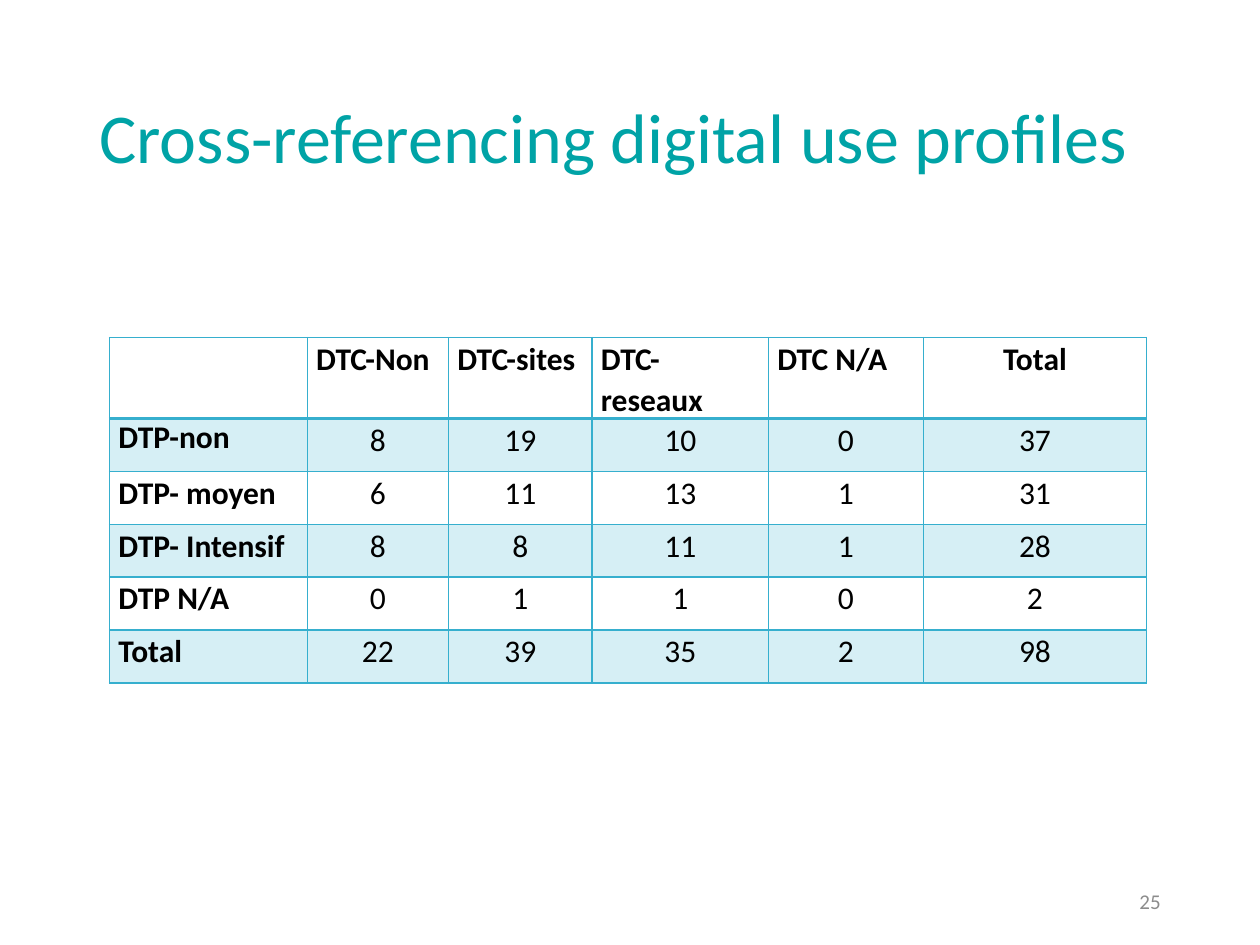
from dataclasses import dataclass

from lxml.etree import SubElement
from pptx import Presentation
from pptx.dml.color import RGBColor
from pptx.enum.text import MSO_ANCHOR, PP_ALIGN
from pptx.oxml.ns import qn
from pptx.util import Inches, Pt

COLORS = {"title": "00A3A6", "number": "8C8C8C", "text": "000000", "accent": "36AFCE"}
FONT = "Calibri"
WIDTH, HEIGHT = Inches(10), Inches(7.5)
COLUMNS = [1.57, 1.12, 1.14, 1.4, 1.23, 1.77]
ROW_HEIGHT = 0.42
HEADER = ["", "DTC-Non", "DTC-sites", "DTC-reseaux", "DTC N/A", "Total"]


@dataclass
class Profile:
    name: str
    counts: list[int]


@dataclass
class Label:
    text: str
    box: tuple[float, float, float, float]
    style: dict


PROFILES = [
    Profile("DTP-non", [8, 19, 10, 0, 37]),
    Profile("DTP- moyen", [6, 11, 13, 1, 31]),
    Profile("DTP- Intensif", [8, 8, 11, 1, 28]),
    Profile("DTP N/A", [0, 1, 1, 0, 2]),
    Profile("Total", [22, 39, 35, 2, 98]),
]
LABELS = [
    Label("Cross-referencing digital use profiles", (0.069, 0.053, 0.862, 0.193),
          dict(size=40, color="title", spacing=0.9, before=10)),
    Label("25", (0.706, 0.927, 0.225, 0.053),
          dict(size=12, color="number", align=PP_ALIGN.RIGHT)),
]


def write(tf, text: str, size=18, color="text", bold=False,
          align=PP_ALIGN.LEFT, spacing=1.0, before=0) -> None:
    p = tf.paragraphs[0]
    p.alignment = align
    p.line_spacing = spacing
    p.space_before = Pt(before)
    p.font.size = Pt(size)
    r = p.add_run()
    r.text = text
    r.font.name = FONT
    r.font.size = Pt(size)
    r.font.bold = bold
    r.font.color.rgb = RGBColor.from_string(COLORS[color])


def add_label(s, label: Label) -> None:
    x, y, w, h = label.box
    sp = s.shapes.add_textbox(int(x * WIDTH), int(y * HEIGHT), int(w * WIDTH), int(h * HEIGHT))
    tf = sp.text_frame
    tf.word_wrap = True
    tf.vertical_anchor = MSO_ANCHOR.MIDDLE
    write(tf, label.text, **label.style)


def set_borders(cell, widths: dict[str, int]) -> None:
    tc_pr = cell._tc.get_or_add_tcPr()
    for side, width in widths.items():
        ln = SubElement(tc_pr, qn(f"a:ln{side}"), w=str(Pt(width)))
        fill = SubElement(ln, qn("a:solidFill"))
        SubElement(fill, qn("a:srgbClr"), val=COLORS["accent"])


def set_fill(cell, shaded: bool) -> None:
    if not shaded:
        cell.fill.background()
        return
    cell.fill.solid()
    cell.fill.fore_color.rgb = RGBColor.from_string(COLORS["accent"])
    color = cell._tc.tcPr.find(qn("a:solidFill")).find(qn("a:srgbClr"))
    SubElement(color, qn("a:alpha"), val="20000")


def add_profile_table(s) -> None:
    rows = [HEADER] + [[profile.name, *profile.counts] for profile in PROFILES]
    frame = s.shapes.add_table(len(rows), len(COLUMNS), Inches(0.87), Inches(2.68),
                               Inches(sum(COLUMNS)), Inches(ROW_HEIGHT * len(rows)))
    table = frame.table
    table.first_row = table.horz_banding = False
    for column, width in zip(table.columns, COLUMNS):
        column.width = Inches(width)
    for i, row in enumerate(rows):
        for j, value in enumerate(row):
            cell = table.cell(i, j)
            cell.margin_left = cell.margin_right = Inches(0.07)
            cell.margin_top = cell.margin_bottom = 0
            set_borders(cell, {"L": 1, "R": 1, "T": 2 if i == 1 else 1, "B": 2 if i == 0 else 1})
            set_fill(cell, i % 2 == 1)
            centered = j == len(row) - 1 or (i > 0 and j > 0)
            if value != "":
                write(cell.text_frame, str(value), bold=i == 0 or j == 0,
                      align=PP_ALIGN.CENTER if centered else PP_ALIGN.LEFT,
                      spacing=1.0 if (i, j) == (1, 0) else 1.07)


def main() -> None:
    prs = Presentation()
    prs.slide_width, prs.slide_height = WIDTH, HEIGHT
    s = prs.slides.add_slide(prs.slide_layouts[6])
    for label in LABELS:
        add_label(s, label)
    add_profile_table(s)
    prs.save("out.pptx")


if __name__ == "__main__":
    main()
